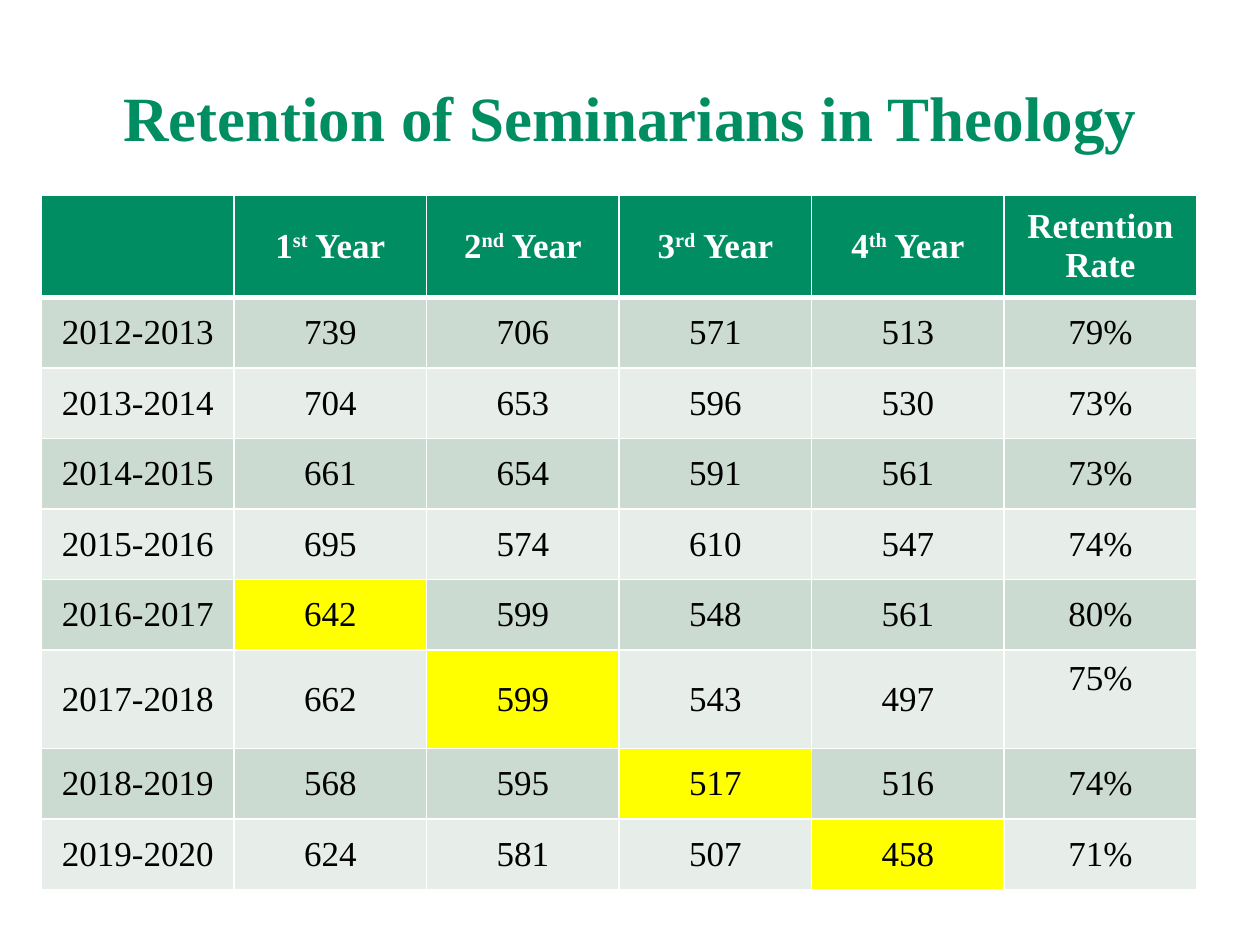
import pptx
import pptx.dml.color
import pptx.enum.text
import pptx.oxml
import pptx.oxml.ns
import pptx.util
from pptx.util import Inches

TITLE = "Retention of Seminarians in Theology"
# Each heading is a list of (text, raised) runs.
HEADS = [[]] + [
    [(num, False), (end, True), (" Year", False)]
    for num, end in [("1", "st"), ("2", "nd"), ("3", "rd"), ("4", "th")]
] + [[("Retention Rate", False)]]
ROWS = [
    ("2012-2013", 739, 706, 571, 513, "79%"),
    ("2013-2014", 704, 653, 596, 530, "73%"),
    ("2014-2015", 661, 654, 591, 561, "73%"),
    ("2015-2016", 695, 574, 610, 547, "74%"),
    ("2016-2017", 642, 599, 548, 561, "80%"),
    ("2017-2018", 662, 599, 543, 497, "75%"),
    ("2018-2019", 568, 595, 517, 516, "74%"),
    ("2019-2020", 624, 581, 507, 458, "71%"),
]
COHORT = 5  # table row where the marked diagonal starts
TALL = 6    # table row that is taller than the rest

THEME = {
    "font": "Times New Roman", "title": 36, "cell": 20,
    "green": "008D61", "bands": ("CCDBD2", "E7EEEA"), "mark": "FFFF00",
    "white": "FFFFFF", "black": "000000", "thin": 1, "thick": 3,
}
BOX = {"left": 0.33, "top": 1.55, "width": 9.17, "height": 5.53}
HEIGHTS = {0: 0.81, TALL: 0.78}
HEIGHT = 0.56


def tint(code):
    return pptx.dml.color.RGBColor.from_string(code)


def style(font, size, color, bold):
    look = {"name": THEME["font"], "size": pptx.util.Pt(size), "bold": bold}
    for key, val in look.items():
        setattr(font, key, val)
    font.color.rgb = tint(color)


def edge(cell, row):
    """Draw white cell borders, thick between the heading and the body."""
    for side in "LRTB":
        thick = (row, side) in [(0, "B"), (1, "T")]
        wide = pptx.util.Pt(THEME["thick" if thick else "thin"])
        cell._tc.get_or_add_tcPr().append(pptx.oxml.parse_xml(
            f'<a:ln{side} {pptx.oxml.ns.nsdecls("a")} w="{wide}">'
            f'<a:solidFill><a:srgbClr val="{THEME["white"]}"/></a:solidFill>'
            f'</a:ln{side}>'))


def shade(row, col):
    if row == 0:
        return THEME["green"]
    if row >= COHORT and col == row - COHORT + 1:
        return THEME["mark"]
    return THEME["bands"][(row - 1) % 2]


def fill(cell, row, col, runs):
    edge(cell, row)
    cell.fill.solid()
    cell.fill.fore_color.rgb = tint(shade(row, col))
    cell.vertical_anchor = pptx.enum.text.MSO_ANCHOR.MIDDLE
    para = cell.text_frame.paragraphs[0]
    para.alignment = pptx.enum.text.PP_ALIGN.CENTER
    head = row == 0
    for text, raised in runs:
        run = para.add_run()
        run.text = text
        style(run.font, THEME["cell"], THEME["white" if head else "black"], head)
        if raised:
            run._r.get_or_add_rPr().set("baseline", "30000")


def main():
    deck = pptx.Presentation()
    deck.slide_width, deck.slide_height = Inches(10), Inches(7.5)
    slide = deck.slides.add_slide(deck.slide_layouts[5])

    title = slide.shapes.title
    place = {"left": 0.5, "top": 0.3, "width": 9, "height": 1.25}
    for key, val in place.items():
        setattr(title, key, Inches(val))
    frame = title.text_frame
    frame.text = TITLE
    frame.auto_size = pptx.enum.text.MSO_AUTO_SIZE.NONE
    frame.vertical_anchor = pptx.enum.text.MSO_ANCHOR.MIDDLE
    para = frame.paragraphs[0]
    para.alignment = pptx.enum.text.PP_ALIGN.CENTER
    style(para.runs[0].font, THEME["title"], THEME["green"], True)

    grid = [HEADS] + [[[(str(val), False)] for val in row] for row in ROWS]
    sizes = {key: Inches(val) for key, val in BOX.items()}
    table = slide.shapes.add_table(len(grid), len(HEADS), **sizes).table
    for row, cells in enumerate(grid):
        table.rows[row].height = Inches(HEIGHTS.get(row, HEIGHT))
        for col, runs in enumerate(cells):
            fill(table.cell(row, col), row, col, runs)
    # The rate in the tall row sits near the top of its cell.
    table.cell(TALL, len(HEADS) - 1).margin_bottom = Inches(0.37)

    deck.save("out.pptx")


if __name__ == "__main__":
    main()
